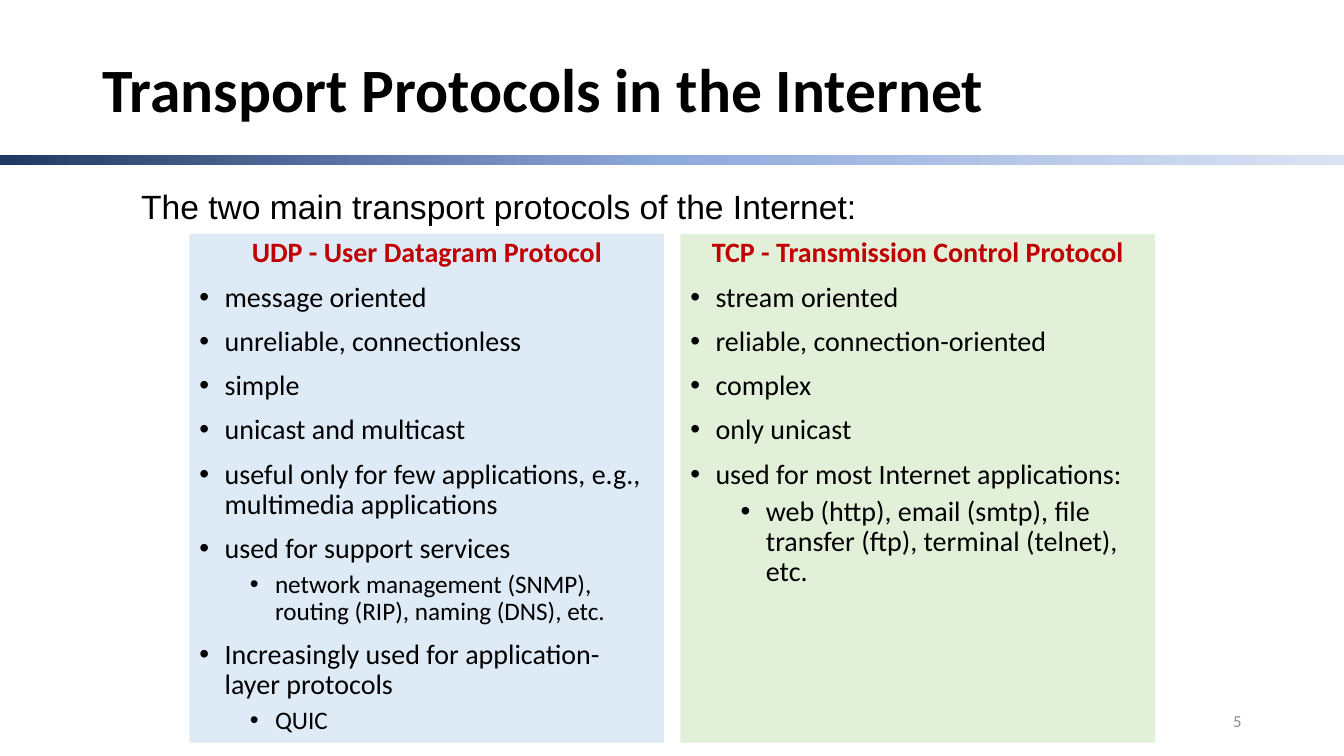
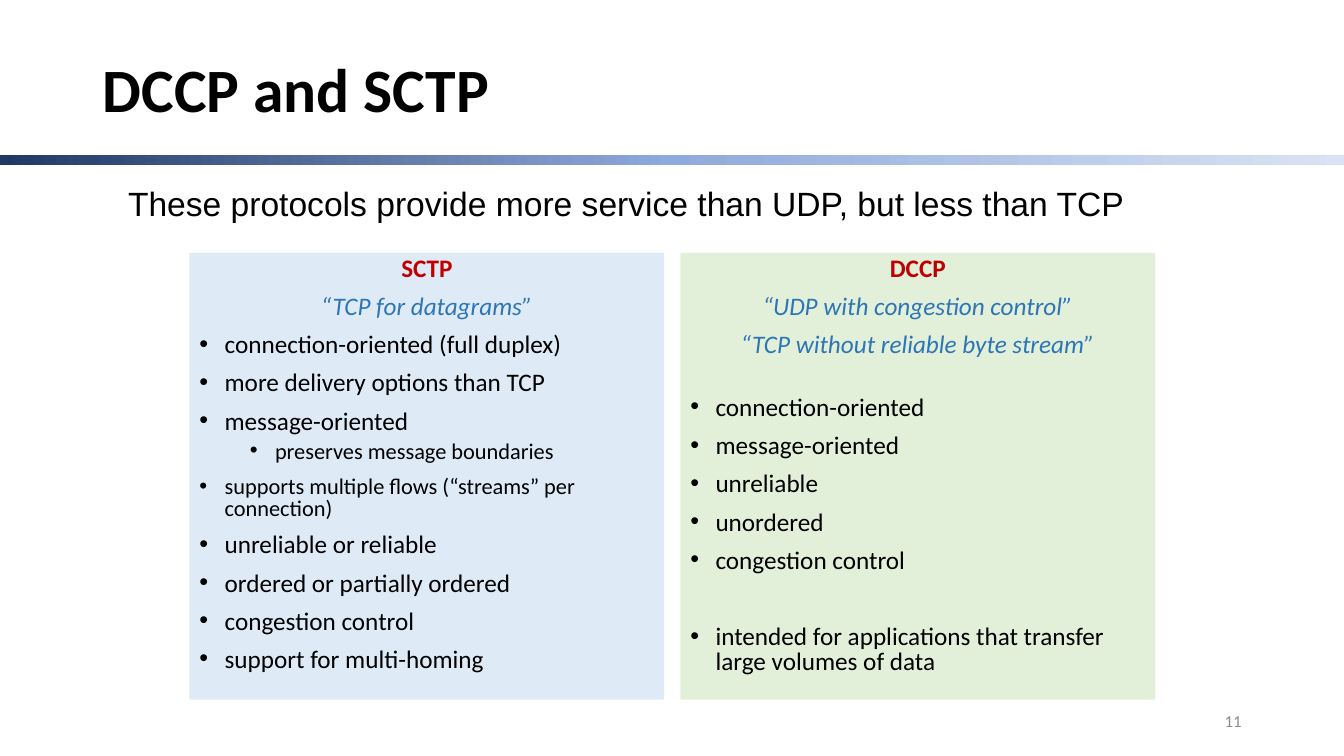
import copy
from dataclasses import dataclass
from typing import Optional

import lxml.etree
import pptx
import pptx.dml.color
import pptx.enum.shapes
import pptx.enum.text
import pptx.oxml.ns
import pptx.util

Pt = pptx.util.Pt
RGB = pptx.dml.color.RGBColor.from_string
Align = pptx.enum.text.PP_ALIGN
Anchor = pptx.enum.text.MSO_ANCHOR
RECTANGLE = pptx.enum.shapes.MSO_SHAPE.RECTANGLE
qn = pptx.oxml.ns.qn


@dataclass(frozen=True)
class Theme:
    ink: str = "000000"
    heading: str = "C00000"
    quote: str = "2E75B6"
    page_number: str = "8C8C8C"
    panels: tuple = ("DEEBF7", "E2F0D9")
    band: tuple = ((0, "203864"), (0.5, "8FAADC"), (1, "DAE3F3"))
    font: str = "Calibri"
    lead_font: str = "Arial"
    title_size: float = 44
    lead_size: float = 24
    page_number_size: float = 12


THEME = Theme()
SLIDE_WIDTH, SLIDE_HEIGHT = 960, 540
PANEL_LEFT, PANEL_WIDTH, PANEL_GAP = 135.36, 339.12, 11.52
BULLET_HANG, LEVEL_STEP = 18, 36


@dataclass(frozen=True)
class Box:
    left: float
    top: float
    width: float
    height: float

    def lengths(self) -> tuple:
        return tuple(Pt(v) for v in (self.left, self.top, self.width, self.height))


@dataclass(frozen=True)
class Style:
    size: float
    color: str = THEME.ink
    font: str = THEME.font
    bold: bool = False
    italic: bool = False


@dataclass(frozen=True)
class Line:
    """A panel line; size None takes the panel's size, gap is extra space above."""
    text: str
    kind: str = "bullet"
    level: int = 0
    size: Optional[float] = None
    gap: float = 0


@dataclass(frozen=True)
class Comparison:
    title: str
    lead: str
    lead_left: float
    lead_top: float
    page: int
    panel_top: float
    panel_height: float
    size: float
    line_spacing: float
    panels: tuple


def heading(text: str) -> Line:
    return Line(text, "heading")


def quote(text: str) -> Line:
    return Line(text, "quote")


def sub(text: str, size: float) -> Line:
    return Line(text, level=1, size=size)


def write(paragraph, text: str, style: Style) -> None:
    paragraph.text = text
    for run in paragraph.runs:
        run.font.name = style.font
        run.font.size = Pt(style.size)
        run.font.bold = style.bold
        run.font.italic = style.italic
        run.font.color.rgb = RGB(style.color)


def add_label(slide, box: Box, text: str, style: Style, align=Align.LEFT,
              anchor=Anchor.MIDDLE, line_spacing: float = 1.0) -> None:
    frame = slide.shapes.add_textbox(*box.lengths()).text_frame
    frame.word_wrap = True
    frame.vertical_anchor = anchor
    paragraph = frame.paragraphs[0]
    paragraph.alignment = align
    paragraph.line_spacing = line_spacing
    write(paragraph, text, style)


def add_rectangle(slide, box: Box):
    rectangle = slide.shapes.add_shape(RECTANGLE, *box.lengths())
    rectangle.shadow.inherit = False
    rectangle.line.fill.background()
    return rectangle


def add_band(slide) -> None:
    band = add_rectangle(slide, Box(0, 110.9, SLIDE_WIDTH, 6.7))
    band.fill.gradient()
    band.fill.gradient_angle = 0
    stops = band._element.spPr.find(f".//{qn('a:gsLst')}")
    stops.append(copy.deepcopy(stops[0]))
    for stop, (position, color) in zip(band.fill.gradient_stops, THEME.band):
        stop.position = position
        stop.color.rgb = RGB(color)


def add_bullet(paragraph, level: int) -> None:
    properties = paragraph._p.get_or_add_pPr()
    properties.set("marL", str(Pt(BULLET_HANG + level * LEVEL_STEP)))
    properties.set("indent", str(-Pt(BULLET_HANG)))
    lxml.etree.SubElement(properties, qn("a:buFont"), typeface="Arial")
    lxml.etree.SubElement(properties, qn("a:buChar"), char="•")


def add_panel(slide, box: Box, color: str, lines: tuple, size: float,
              line_spacing: float) -> None:
    panel = add_rectangle(slide, box)
    panel.fill.solid()
    panel.fill.fore_color.rgb = RGB(color)
    frame = panel.text_frame
    frame.word_wrap = True
    frame.vertical_anchor = Anchor.TOP
    colors = {"heading": THEME.heading, "quote": THEME.quote, "bullet": THEME.ink}
    for index, line in enumerate(lines):
        paragraph = frame.add_paragraph() if index else frame.paragraphs[0]
        write(paragraph, line.text,
              Style(line.size or size, colors[line.kind],
                    bold=line.kind == "heading", italic=line.kind == "quote"))
        paragraph.level = line.level
        paragraph.line_spacing = line_spacing
        if index:
            paragraph.space_before = Pt((5 if line.level else 10) + line.gap)
        if line.kind == "bullet":
            paragraph.alignment = Align.LEFT
            add_bullet(paragraph, line.level)
        else:
            paragraph.alignment = Align.CENTER


def add_comparison(deck, content: Comparison) -> None:
    slide = deck.slides.add_slide(deck.slide_layouts[6])
    add_band(slide)
    add_label(slide, Box(66.24, 28.8, 828, 74.9), content.title,
              Style(THEME.title_size, bold=True), line_spacing=0.9)
    for column, (color, lines) in enumerate(zip(THEME.panels, content.panels)):
        left = PANEL_LEFT + column * (PANEL_WIDTH + PANEL_GAP)
        add_panel(slide, Box(left, content.panel_top, PANEL_WIDTH, content.panel_height),
                  color, lines, content.size, content.line_spacing)
    add_label(slide, Box(content.lead_left, content.lead_top, 800, 36), content.lead,
              Style(THEME.lead_size, font=THEME.lead_font), anchor=Anchor.TOP)
    add_label(slide, Box(678, 500.5, 216, 28.75), str(content.page),
              Style(THEME.page_number_size, THEME.page_number), align=Align.RIGHT)


COMPARISONS = (
    Comparison(
        title="Transport Protocols in the Internet",
        lead="The two main transport protocols of the Internet:",
        lead_left=93.8, lead_top=129.6, page=5,
        panel_top=167, panel_height=363.5, size=20, line_spacing=0.9,
        panels=(
            (
                heading("UDP - User Datagram Protocol"),
                Line("message oriented"),
                Line("unreliable, connectionless"),
                Line("simple"),
                Line("unicast and multicast"),
                Line("useful only for few applications, e.g., multimedia applications"),
                Line("used for support services"),
                sub("network management (SNMP), routing (RIP), naming (DNS), etc.", 18),
                Line("Increasingly used for application-layer protocols"),
                sub("QUIC", 18),
            ),
            (
                heading("TCP - Transmission Control Protocol"),
                Line("stream oriented"),
                Line("reliable, connection-oriented"),
                Line("complex"),
                Line("only unicast"),
                Line("used for most Internet applications:"),
                sub("web (http), email (smtp), file transfer (ftp), terminal (telnet), etc.", 20),
            ),
        ),
    ),
    Comparison(
        title="DCCP and SCTP",
        lead="These protocols provide more service than UDP, but less than TCP",
        lead_left=84.4, lead_top=127.4, page=11,
        panel_top=180.7, panel_height=319, size=18, line_spacing=0.8,
        panels=(
            (
                heading("SCTP"),
                quote("“TCP for datagrams”"),
                Line("connection-oriented (full duplex)"),
                Line("more delivery options than TCP"),
                Line("message-oriented"),
                sub("preserves message boundaries", 16),
                Line("supports multiple flows (“streams” per connection)", size=16),
                Line("unreliable or reliable"),
                Line("ordered or partially ordered"),
                Line("congestion control"),
                Line("support for multi-homing"),
            ),
            (
                heading("DCCP"),
                quote("“UDP with congestion control”"),
                quote("“TCP without reliable byte stream”"),
                Line("connection-oriented", gap=17.5),
                Line("message-oriented"),
                Line("unreliable"),
                Line("unordered"),
                Line("congestion control"),
                Line("intended for applications that transfer large volumes of data", gap=27.5),
            ),
        ),
    ),
)


def main() -> None:
    deck = pptx.Presentation()
    deck.slide_width, deck.slide_height = Pt(SLIDE_WIDTH), Pt(SLIDE_HEIGHT)
    for content in COMPARISONS:
        add_comparison(deck, content)
    deck.save("out.pptx")


if __name__ == "__main__":
    main()
